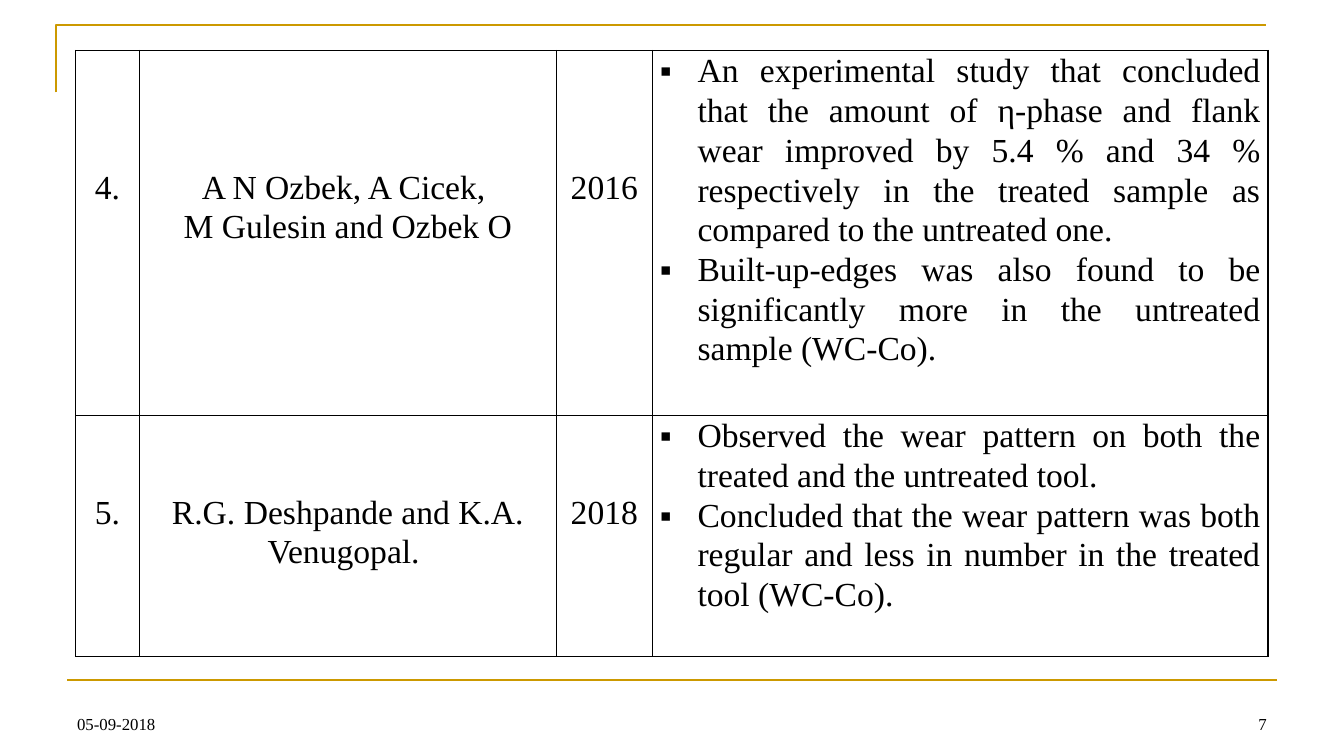
from lxml import etree
from pptx import Presentation
from pptx.dml.color import RGBColor
from pptx.enum.shapes import MSO_CONNECTOR
from pptx.enum.text import MSO_ANCHOR, PP_ALIGN
from pptx.oxml.ns import qn
from pptx.util import Pt

STRAIGHT = MSO_CONNECTOR.STRAIGHT
BOTTOM = MSO_ANCHOR.BOTTOM
LEFT, CENTER = PP_ALIGN.LEFT, PP_ALIGN.CENTER
RIGHT, JUSTIFY = PP_ALIGN.RIGHT, PP_ALIGN.JUSTIFY

# Content: number, authors, year, findings
STUDIES = [
    (["4."],
     ["A N Ozbek, A Cicek, ", "M Gulesin and Ozbek O"],
     ["2016"],
     ["An experimental study that concluded that the amount of η-phase and flank wear "
      "improved by 5.4 % and 34 % respectively in the treated sample as compared to "
      "the untreated one. ",
      "Built-up-edges was also found to be significantly more in the untreated "
      "sample (WC-Co)."]),
    (["5."],
     ["R.G. Deshpande and K.A. Venugopal. "],
     ["2018"],
     ["Observed the wear pattern on both the treated and the untreated tool.",
      "Concluded that the wear pattern was both regular and less in number in the "
      "treated tool (WC-Co)."]),
]
FOOTERS = [("05-09-2018", 48, LEFT), ("7", 688, RIGHT)]

# Style and layout, in points
COLORS = {"gold": "CC9900", "ink": "000000"}
FONT = "Times New Roman"
TABLE_LEFT, TABLE_TOP = 54, 36
COLUMN_WIDTHS = [45.4, 298.1, 68.4, 439.9]
ROW_HEIGHTS = [260.6, 172.1]
TEXT_DROPS = [83, 54.5]
FINDINGS_COLUMN = 3
SIDE_MARGIN = 5.4
BULLET_INDENT = 27


def color(name):
    return RGBColor.from_string(COLORS[name])


def add_text(para, text, size, align):
    para.alignment = align
    span = para.add_run()
    span.text = text
    span.font.name = FONT
    span.font.size = Pt(size)
    span.font.color.rgb = color("ink")


def add_bullet(para):
    properties = para._p.get_or_add_pPr()
    properties.set("marL", str(Pt(BULLET_INDENT)))
    properties.set("indent", str(-Pt(BULLET_INDENT)))
    etree.SubElement(properties, qn("a:buFont"), typeface=FONT)
    etree.SubElement(properties, qn("a:buChar"), char="▪")


def add_borders(cell):
    properties = cell._tc.get_or_add_tcPr()
    for side in ("lnL", "lnR", "lnT", "lnB"):
        border = etree.SubElement(properties, qn("a:" + side), w=str(Pt(1)))
        fill = etree.SubElement(border, qn("a:solidFill"))
        etree.SubElement(fill, qn("a:srgbClr"), val=COLORS["ink"])


def fill_cell(cell, lines, is_findings, drop):
    add_borders(cell)
    cell.fill.background()
    cell.margin_left = cell.margin_right = Pt(SIDE_MARGIN)
    cell.margin_top = Pt(0 if is_findings else drop)
    cell.margin_bottom = Pt(0)
    frame = cell.text_frame
    for index, line in enumerate(lines):
        para = frame.add_paragraph() if index else frame.paragraphs[0]
        para.line_spacing = 1.07
        add_text(para, line, 24, JUSTIFY if is_findings else CENTER)
        if is_findings:
            add_bullet(para)


deck = Presentation()
deck.slide_width, deck.slide_height = Pt(960), Pt(540)
page = deck.slides.add_slide(deck.slide_layouts[6])

# Gold corner at the top
builder = page.shapes.build_freeform(Pt(40), Pt(66))
builder.add_line_segments([(Pt(40), Pt(18)), (Pt(904), Pt(18))], close=False)
corner = builder.convert_to_shape()
corner.shadow.inherit = False
corner.fill.background()

# Gold rule above the footer
rule = page.shapes.add_connector(STRAIGHT, Pt(48), Pt(486), Pt(912), Pt(486))
etree.SubElement(rule._element.spPr, qn("a:effectLst"))
for outline in (corner.line, rule.line):
    outline.color.rgb = color("gold")
    outline.width = Pt(1.5)

# Table of studies
table = page.shapes.add_table(
    len(STUDIES), len(COLUMN_WIDTHS), Pt(TABLE_LEFT), Pt(TABLE_TOP),
    Pt(sum(COLUMN_WIDTHS)), Pt(sum(ROW_HEIGHTS))).table
table.first_row = table.horz_banding = False
for column, width in zip(table.columns, COLUMN_WIDTHS):
    column.width = Pt(width)
for row, height, study, drop in zip(table.rows, ROW_HEIGHTS, STUDIES, TEXT_DROPS):
    row.height = Pt(height)
    for index, (cell, lines) in enumerate(zip(row.cells, study)):
        fill_cell(cell, lines, index == FINDINGS_COLUMN, drop)

# Date and page number
for text, left, align in FOOTERS:
    box = page.shapes.add_textbox(Pt(left), Pt(492), Pt(224), Pt(36))
    box.text_frame.word_wrap = True
    box.text_frame.vertical_anchor = BOTTOM
    add_text(box.text_frame.paragraphs[0], text, 12, align)

deck.save("out.pptx")
